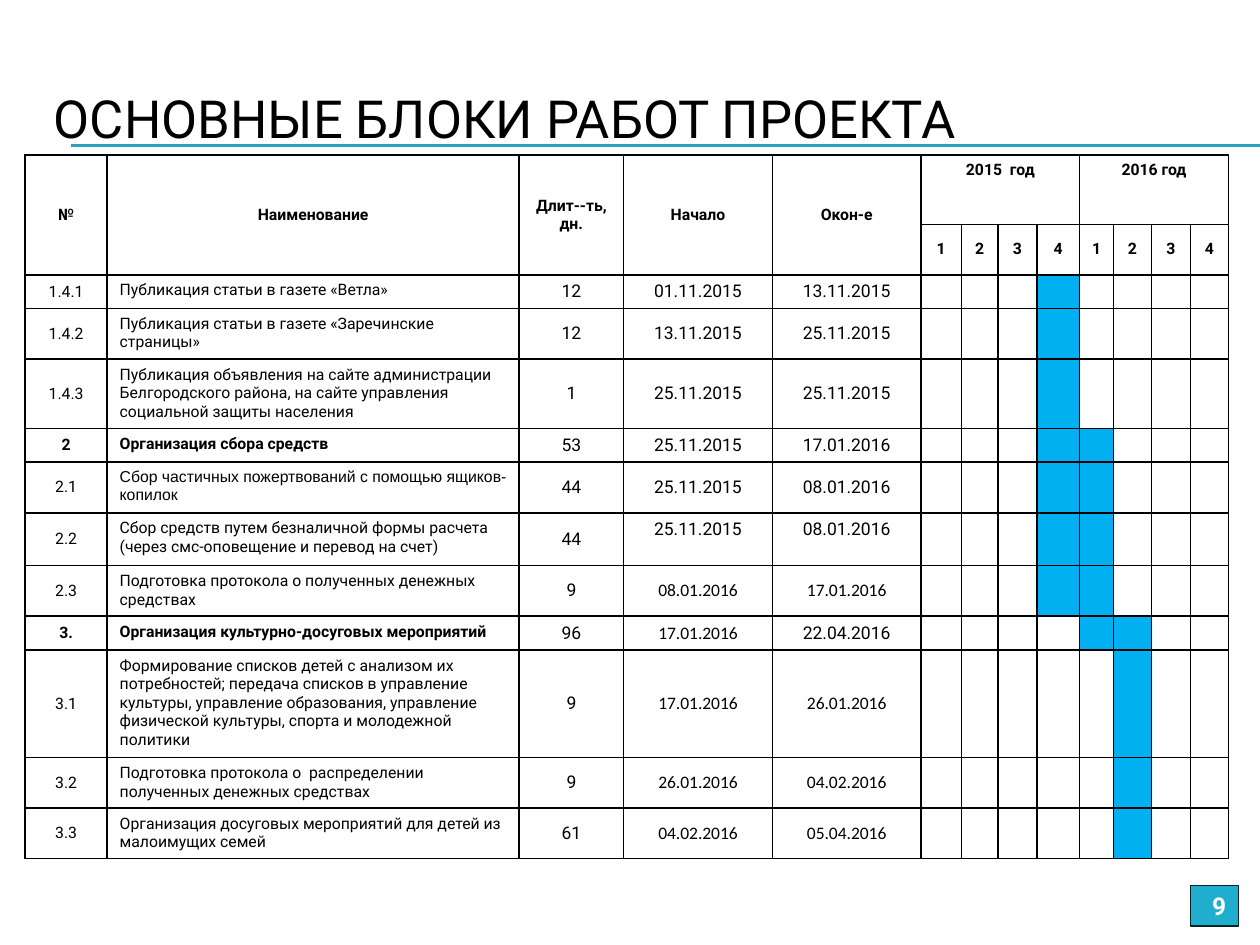
from lxml import etree
from pptx import Presentation
from pptx import util as u
from pptx.dml.color import RGBColor
from pptx.enum import shapes, text
from pptx.oxml.ns import qn

TITLE = "ОСНОВНЫЕ БЛОКИ РАБОТ ПРОЕКТА"
PAGE = "9"
HEADERS = ["№", "Наименование", "Длит--ть, дн.", "Начало", "Окон-е"]
YEARS = ["2015  год", "2016 год"]
QUARTERS = ["1", "2", "3", "4"]

# number, name, days, start, end, busy quarters counted from the first of 2015
TASKS = [
    ("1.4.1", "Публикация статьи в газете «Ветла»", "12", "01.11.2015", "13.11.2015", [4]),
    ("1.4.2", "Публикация статьи в газете «Заречинские страницы»",
     "12", "13.11.2015", "25.11.2015", [4]),
    ("1.4.3", "Публикация объявления на сайте администрации Белгородского района, "
     "на сайте управления социальной защиты населения", "1", "25.11.2015", "25.11.2015", [4]),
    ("2", "Организация сбора средств", "53", "25.11.2015", "17.01.2016", [4, 5]),
    ("2.1", "Сбор частичных пожертвований с помощью ящиков-копилок",
     "44", "25.11.2015", "08.01.2016", [4, 5]),
    ("2.2", "Сбор средств путем безналичной формы расчета (через смс-оповещение "
     "и перевод на счет)", "44", "25.11.2015", "08.01.2016", [4, 5]),
    ("2.3", "Подготовка протокола о полученных денежных средствах",
     "9", "08.01.2016", "17.01.2016", [4, 5]),
    ("3.", "Организация культурно-досуговых мероприятий",
     "96", "17.01.2016", "22.04.2016", [5, 6]),
    ("3.1", "Формирование списков детей с анализом их потребностей; передача списков "
     "в управление культуры, управление образования, управление физической культуры, "
     "спорта и молодежной политики", "9", "17.01.2016", "26.01.2016", [6]),
    ("3.2", "Подготовка протокола о  распределении полученных денежных средствах",
     "9", "26.01.2016", "04.02.2016", [6]),
    ("3.3", "Организация досуговых мероприятий для детей из малоимущих семей",
     "61", "04.02.2016", "05.04.2016", [6]),
]
SECTIONS = {"2", "3."}
TOP_DATES = {"2.2"}
CELL_FONTS = {("2.1", 1): "Arial", ("3.", 3): "Calibri"}
CELL_FONTS.update({(n, c): "Calibri" for n in ("2.3", "3.1", "3.2", "3.3") for c in (3, 4)})

COLS = [0.65, 3.27, 0.83, 1.18, 1.18, 0.32, 0.29, 0.31, 0.34, 0.27, 0.3, 0.31, 0.3]
ROWS = [0.55, 0.39, 0.26, 0.39, 0.53, 0.26, 0.38, 0.42, 0.39, 0.27, 0.82, 0.39, 0.37]
FIRST_QUARTER = len(HEADERS)

BLACK, WHITE, BUSY = "000000", "FFFFFF", "00B0F0"
RULE, BADGE, BADGE_EDGE = "2DA2BF", "1FAECD", "062329"
MIDDLE, TOP = text.MSO_ANCHOR.MIDDLE, text.MSO_ANCHOR.TOP
LEFT, CENTER, RIGHT = text.PP_ALIGN.LEFT, text.PP_ALIGN.CENTER, text.PP_ALIGN.RIGHT


def rgb(color):
    return RGBColor.from_string(color)


def inches(*values):
    return [u.Inches(v) for v in values]


def write(tf, words, size, font="Roboto", color=BLACK, bold=False, align=LEFT, anchor=MIDDLE):
    tf.text = words
    tf.word_wrap = True
    tf.vertical_anchor = anchor
    p = tf.paragraphs[0]
    p.alignment = align
    for r in p.runs:
        r.font.size, r.font.name, r.font.bold = u.Pt(size), font, bold
        r.font.color.rgb = rgb(color)


def frame(cell, fill=WHITE):
    """Black one-point borders and a solid fill."""
    tc_pr = cell._tc.get_or_add_tcPr()
    for side in ("a:lnL", "a:lnR", "a:lnT", "a:lnB"):
        ln = etree.SubElement(tc_pr, qn(side), w=str(u.Pt(1)))
        solid = etree.SubElement(ln, qn("a:solidFill"))
        etree.SubElement(solid, qn("a:srgbClr"), val=BLACK)
    cell.fill.solid()
    cell.fill.fore_color.rgb = rgb(fill)


def fill_cell(cell, words, size=9, side=0.1, anchor=MIDDLE, align=CENTER, **style):
    cell.margin_left = cell.margin_right = u.Inches(side)
    cell.margin_top = cell.margin_bottom = u.Inches(0.05)
    write(cell.text_frame, words, size, align=align, **style)
    cell.vertical_anchor = anchor


def add_rule(s, y):
    line = s.shapes.add_connector(shapes.MSO_CONNECTOR.STRAIGHT, *inches(0.56, y, 10, y))
    line.line.color.rgb, line.line.width = rgb(RULE), u.Pt(0.75)
    etree.SubElement(line._element.spPr, qn("a:effectLst"))


def add_schedule(s):
    table = s.shapes.add_table(len(ROWS), len(COLS),
                               *inches(0.2, 1.23, sum(COLS), sum(ROWS))).table
    table.first_row = table.horz_banding = False
    for col, width in zip(table.columns, COLS):
        col.width = u.Inches(width)
    for row, height in zip(table.rows, ROWS):
        row.height = u.Inches(height)

    busy = {(i, FIRST_QUARTER + q - 1) for i, task in enumerate(TASKS, 2) for q in task[-1]}
    for i in range(len(ROWS)):
        for j in range(len(COLS)):
            cell = table.cell(i, j)
            frame(cell, BUSY if (i, j) in busy else WHITE)
            p = cell.text_frame.paragraphs[0]._p
            etree.SubElement(p, qn("a:endParaRPr"), sz="900")

    for j, words in enumerate(HEADERS):
        table.cell(0, j).merge(table.cell(1, j))
        fill_cell(table.cell(0, j), words, bold=True)
    for y, year in enumerate(YEARS):
        first = FIRST_QUARTER + y * len(QUARTERS)
        table.cell(0, first).merge(table.cell(0, first + len(QUARTERS) - 1))
        fill_cell(table.cell(0, first), year, bold=True, anchor=TOP)
        for j, quarter in enumerate(QUARTERS, first):
            fill_cell(table.cell(1, j), quarter, bold=True, side=0.04)

    for i, (number, *rest, _) in enumerate(TASKS, 2):
        for j, words in enumerate([number, *rest]):
            at_top = j == 1 or (j > 2 and number in TOP_DATES)
            fill_cell(table.cell(i, j), words, size=9 if j < 2 else 10,
                      font=CELL_FONTS.get((number, j), "Roboto"),
                      bold=j < 2 and number in SECTIONS,
                      align=LEFT if j == 1 else CENTER, anchor=TOP if at_top else MIDDLE)


def main():
    prs = Presentation()
    prs.slide_width, prs.slide_height = inches(10, 7.5)
    s = prs.slides.add_slide(prs.slide_layouts[6])

    for y in (1.15, 1.16):
        add_rule(s, y)
    title = s.shapes.add_textbox(*inches(0.33, 0.47, 9.5, 0.92))
    write(title.text_frame, TITLE, 30)
    add_schedule(s)

    badge = s.shapes.add_shape(shapes.MSO_SHAPE.RECTANGLE, *inches(9.45, 7.03, 0.38, 0.32))
    badge.shadow.inherit = False
    badge.fill.solid()
    badge.fill.fore_color.rgb = rgb(BADGE)
    badge.line.color.rgb, badge.line.width = rgb(BADGE_EDGE), u.Pt(0.75)
    write(badge.text_frame, PAGE, 14, color=WHITE, bold=True, align=RIGHT)

    prs.save("out.pptx")


if __name__ == "__main__":
    main()
